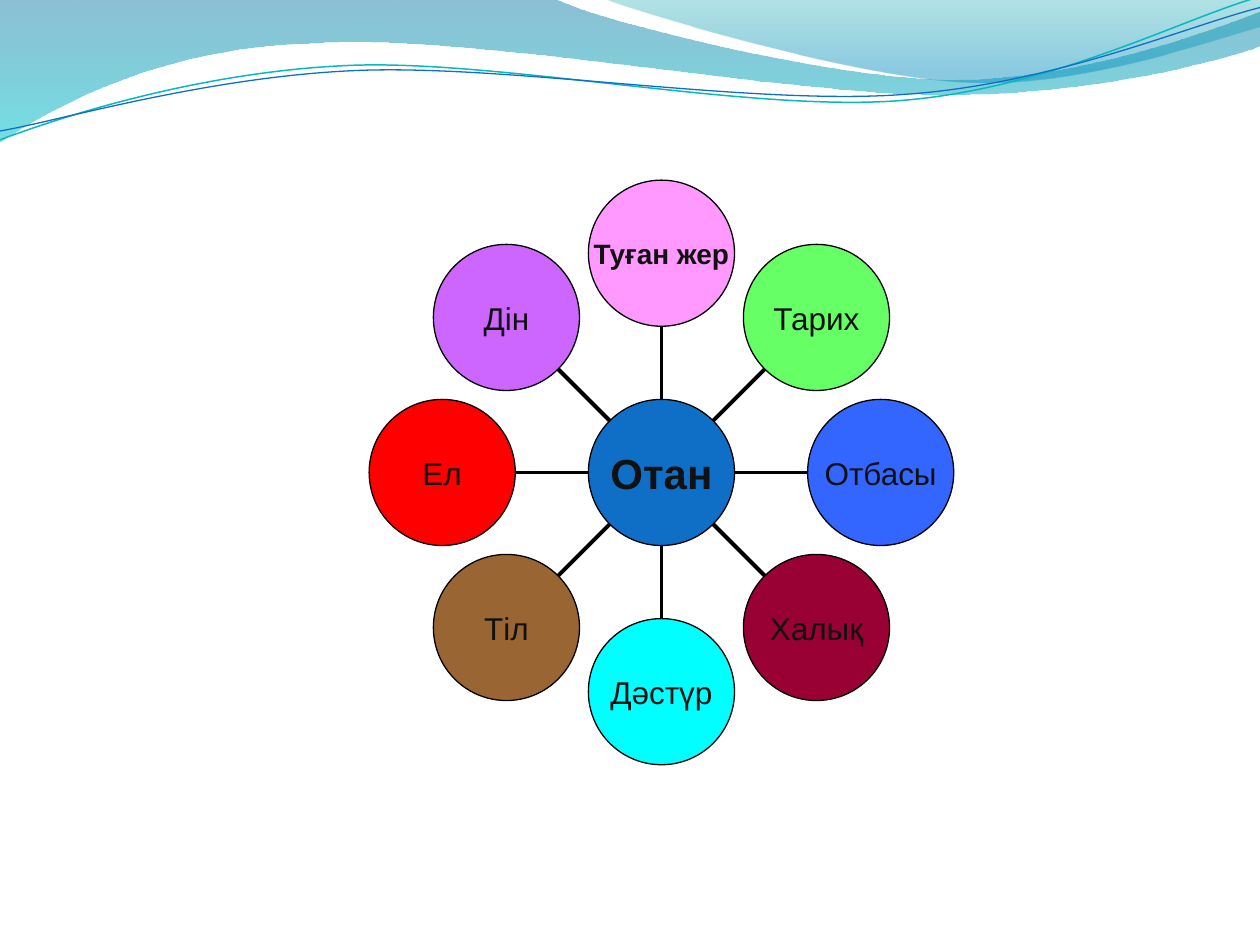
import math

import pptx
from lxml import etree
from pptx.dml.color import RGBColor
from pptx.enum.shapes import MSO_CONNECTOR, MSO_SHAPE
from pptx.enum.text import MSO_ANCHOR, PP_ALIGN
from pptx.oxml.ns import qn
from pptx.util import Inches, Pt

BLACK = RGBColor(0x00, 0x00, 0x00)
INK = RGBColor(0x11, 0x11, 0x11)
BLUE = RGBColor(0x0F, 0x6F, 0xC6)
TEAL = RGBColor(0x0A, 0xB8, 0xBF)

# Each wave: start point, then segments of one point (line) or three (Bézier).
# Units are tenths of the slide's width.
BANDS = [
    ((0, 0), [
        [(4.4, -0.01)],
        [(4.76, 0.17), (6.64, 0.63), (7.58, 0.63)],
        [(8.53, 0.63), (9.58, 0.26), (10, 0.09)],
        [(10.01, 0.36)],
        [(9.83, 0.44), (8.7, 0.76), (7.46, 0.75)],
        [(6.22, 0.75), (3.82, 0.28), (2.57, 0.34)],
        [(1.29, 0.36), (0.46, 0.83), (-0.01, 1.13)],
        [(0, 0)],
    ], [(0, RGBColor(0x00, 0x74, 0xA1), 45), (1, RGBColor(0x00, 0xC6, 0xCF), 55)]),
    ((4.79, -0.01), [
        [(5.09, 0.11), (6.82, 0.62), (7.69, 0.65)],
        [(8.56, 0.69), (9.61, 0.32), (10, 0.21)],
        [(10, 0)],
        [(4.79, -0.01)],
    ], [(0, RGBColor(0x00, 0xA1, 0xA9), 30), (0.8, RGBColor(0x00, 0x8B, 0xBF), 45)]),
]
STRANDS = [
    ((0, 1.11), [
        [(0.48, 0.93), (1.58, 0.57), (2.77, 0.52)],
        [(3.95, 0.47), (5.93, 0.89), (7.13, 0.8)],
        [(8.33, 0.71), (9.38, 0.15), (9.98, -0.02)],
    ], TEAL, 0.85),
    ((0, 1.04), [
        [(0.47, 0.96), (1.64, 0.61), (2.83, 0.56)],
        [(4.03, 0.51), (5.97, 0.84), (7.17, 0.75)],
        [(8.36, 0.67), (9.41, 0.21), (10, 0.06)],
    ], BLUE, 0.75),
]

# Clockwise from the top: label, fill, text size, bold
SATELLITES = [
    ("Туған жер", RGBColor(0xFF, 0x99, 0xFF), 16, True),
    ("Тарих", RGBColor(0x66, 0xFF, 0x66), 18, False),
    ("Отбасы", RGBColor(0x33, 0x66, 0xFF), 18, False),
    ("Халық", RGBColor(0x99, 0x00, 0x33), 18, False),
    ("Дәстүр", RGBColor(0x00, 0xFF, 0xFF), 18, False),
    ("Тіл", RGBColor(0x99, 0x66, 0x33), 18, False),
    ("Ел", RGBColor(0xFF, 0x00, 0x00), 18, False),
    ("Дін", RGBColor(0xCC, 0x66, 0xFF), 18, False),
]


def add_wave(shapes, width, start, segments, close):
    """Draw the control points as lines, then join each triple into a Bézier."""
    unit = width / 10
    first, *rest = [(round(x * unit), round(y * unit))
                    for x, y in [start, *(point for seg in segments for point in seg)]]
    builder = shapes.build_freeform(*first, scale=1.0)
    builder.add_line_segments(rest, close=close)
    sp = builder.convert_to_shape()
    sp.shadow.inherit = False
    lines = iter(list(sp._element.spPr.iter(qn("a:lnTo"))))
    for segment in segments:
        line = next(lines)
        if len(segment) == 3:
            curve = etree.Element(qn("a:cubicBezTo"))
            line.addprevious(curve)
            for part in (line, next(lines), next(lines)):
                curve.append(part[0])
                part.getparent().remove(part)
    return sp


def fill_gradient(sp, stops):
    """Fill from top to bottom with stops of position, colour and opacity."""
    sp.fill.gradient()
    sp.fill.gradient_angle = 270
    for stop, (position, color, _) in zip(sp.fill.gradient_stops, stops):
        stop.position = position
        stop.color.rgb = color
    for clr, (_, _, opacity) in zip(sp._element.spPr.iter(qn("a:srgbClr")), stops):
        etree.SubElement(clr, qn("a:alpha")).set("val", str(opacity * 1000))


def add_header(shapes, width):
    for start, segments, stops in BANDS:
        sp = add_wave(shapes, width, start, segments, True)
        fill_gradient(sp, stops)
        sp.line.fill.background()
    strands = shapes.add_group_shape()
    for start, segments, color, weight in STRANDS:
        sp = add_wave(strands.shapes, width, start, segments, False)
        sp.fill.background()
        sp.line.color.rgb = color
        sp.line.width = Pt(weight)


def add_circle(shapes, cx, cy, radius, label, color, size, bold):
    sp = shapes.add_shape(MSO_SHAPE.OVAL, int(cx - radius), int(cy - radius),
                          int(2 * radius), int(2 * radius))
    sp.shadow.inherit = False
    sp.fill.solid()
    sp.fill.fore_color.rgb = color
    sp.line.color.rgb = BLACK
    sp.line.width = Pt(0.75)
    tf = sp.text_frame
    tf.word_wrap = False
    tf.vertical_anchor = MSO_ANCHOR.MIDDLE
    p = tf.paragraphs[0]
    p.text = label
    p.alignment = PP_ALIGN.CENTER
    p.font.name = "Arial"
    p.font.size = Pt(size)
    p.font.bold = bold
    p.font.color.rgb = INK


def add_spoke(shapes, x1, y1, x2, y2):
    line = shapes.add_connector(MSO_CONNECTOR.STRAIGHT, int(x1), int(y1), int(x2), int(y2))
    line.line.color.rgb = BLACK
    line.line.width = Pt(2.25)
    etree.SubElement(line._element.spPr, qn("a:effectLst"))


def add_radial_diagram(shapes, left, top, size):
    """Hub and satellites; the square box is eight circle radii wide."""
    radius = size / 8
    cx, cy = left + size / 2, top + size / 2

    def polar(distance, angle):
        return cx + distance * math.sin(angle), cy - distance * math.cos(angle)

    for i, satellite in reversed(list(enumerate(SATELLITES))):
        angle = i * math.tau / len(SATELLITES)
        add_spoke(shapes, *polar(radius, angle), *polar(2 * radius, angle))
        add_circle(shapes, *polar(3 * radius, angle), radius, *satellite)
    add_circle(shapes, cx, cy, radius, "Отан", BLUE, 24, True)


def main():
    prs = pptx.Presentation()
    prs.slide_width, prs.slide_height = Inches(10), Inches(7.5)
    s = prs.slides.add_slide(prs.slide_layouts[6])
    add_header(s.shapes, prs.slide_width)
    size = 0.464 * prs.slide_width
    diagram = s.shapes.add_group_shape()
    add_radial_diagram(diagram.shapes, 0.525 * prs.slide_width - size / 2,
                       0.5 * prs.slide_height - size / 2, size)
    prs.save("out.pptx")


if __name__ == "__main__":
    main()
